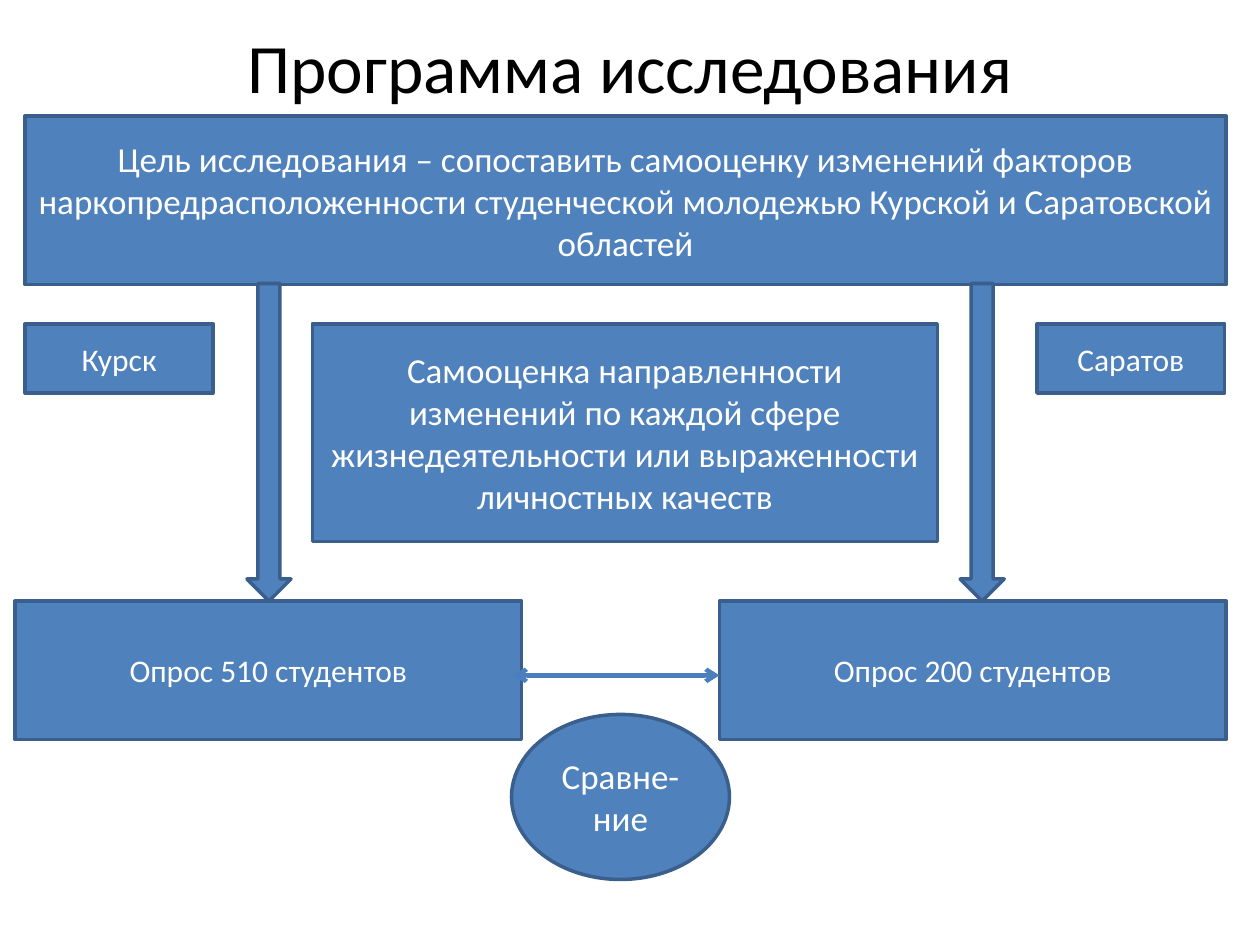
from lxml import etree
from pptx import Presentation, util as u
from pptx.dml.color import RGBColor
from pptx.enum import shapes as es, text as et
from pptx.oxml.ns import qn

FONT = "Calibri"
FILL, EDGE, LINK = "4F81BD", "3A5F8C", "4B7EBC"
KIND = es.MSO_SHAPE


def paint(part, color):
    """Set a solid colour on a fill."""
    part.solid()
    part.fore_color.rgb = RGBColor.from_string(color)


def style(frame, size, color):
    """Centre the text and set its font."""
    frame.word_wrap = True
    frame.vertical_anchor = et.MSO_ANCHOR.MIDDLE
    for para in frame.paragraphs:
        para.alignment = et.PP_ALIGN.CENTER
        for run in para.runs:
            run.font.name = FONT
            run.font.size = u.Pt(size)
            paint(run.font.fill, color)


def place(shape, box):
    shape.left, shape.top, shape.width, shape.height = map(u.Inches, box)


def add_title(slide, words, box):
    title = slide.shapes.title
    place(title, box)
    title.text_frame.text = words
    style(title.text_frame, 39.6, "000000")


def add_node(slide, kind, box, words="", size=18):
    """Add a filled, outlined shape, with text if given."""
    node = slide.shapes.add_shape(kind, *map(u.Inches, box))
    node.shadow.inherit = False
    paint(node.fill, FILL)
    paint(node.line.fill, EDGE)
    node.line.width = u.Pt(2)
    if words:
        node.text_frame.text = words
        style(node.text_frame, size, "FFFFFF")


def add_link(slide, left, right, top):
    """Add a level line with an arrowhead at each end."""
    ends = map(u.Inches, (left, top, right, top))
    link = slide.shapes.add_connector(es.MSO_CONNECTOR.STRAIGHT, *ends)
    paint(link.line.fill, LINK)
    link.line.width = u.Pt(2.5)
    line = link.line._get_or_add_ln()
    for tag in ("a:headEnd", "a:tailEnd"):
        etree.SubElement(line, qn(tag)).set("type", "arrow")
    etree.SubElement(link._element.spPr, qn("a:effectLst"))


def main():
    deck = Presentation()
    deck.slide_width, deck.slide_height = u.Inches(10), u.Inches(7.5)
    slide = deck.slides.add_slide(deck.slide_layouts[5])

    # Surveys, at the back
    for left, count in ((5.71, 200), (0.12, 510)):
        add_node(slide, KIND.RECTANGLE, (left, 4.77, 4.02, 1.1),
                 f"Опрос {count} студентов")

    # Title and goal
    add_title(slide, "Программа исследования", (0.5, 0.13, 9, 0.79))
    add_node(slide, KIND.RECTANGLE, (0.2, 0.92, 9.53, 1.34),
             "Цель исследования – сопоставить самооценку изменений факторов "
             "наркопредрасположенности студенческой молодежью Курской и "
             "Саратовской областей", 20)

    # Comparison of the surveys
    add_link(slide, 4.07, 5.71, 5.36)
    add_node(slide, KIND.OVAL, (4.06, 5.67, 1.73, 1.31), "Сравне-ние", 20)

    # Cities, each with an arrow from goal to survey
    for left, city, shaft in ((0.2, "Курск", 1.96), (8.23, "Саратов", 7.62)):
        add_node(slide, KIND.RECTANGLE, (left, 2.57, 1.49, 0.55), city)
        add_node(slide, KIND.DOWN_ARROW, (shaft, 2.25, 0.35, 2.52))

    # Method
    add_node(slide, KIND.RECTANGLE, (2.48, 2.57, 4.96, 1.73),
             "Самооценка направленности изменений по каждой сфере "
             "жизнедеятельности или выраженности личностных качеств", 20)

    deck.save("out.pptx")


if __name__ == "__main__":
    main()
